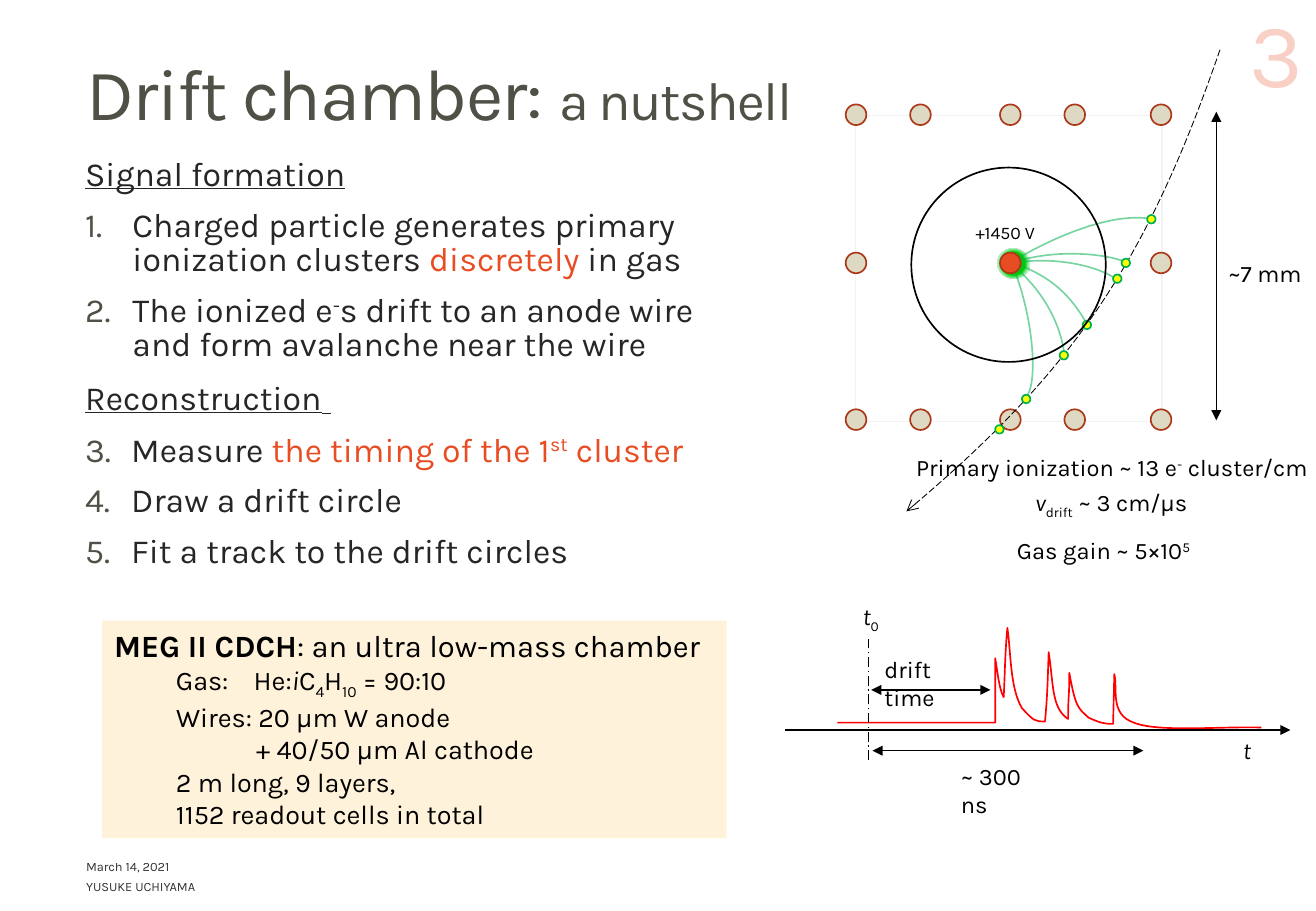
from dataclasses import dataclass
from itertools import product

from lxml.etree import SubElement
from pptx import Presentation
from pptx.dml.color import RGBColor
from pptx.dml.fill import FillFormat
from pptx.dml.line import LineFormat
from pptx.enum.dml import MSO_LINE
from pptx.enum.shapes import MSO_CONNECTOR, MSO_SHAPE
from pptx.enum.text import MSO_ANCHOR, MSO_AUTO_SIZE, PP_ALIGN
from pptx.oxml.ns import qn
from pptx.util import Pt

PX = 9144
FONT = "Karla"
BLACK, INK, OLIVE, ORANGE = "000000", "262626", "505046", "E84C22"
GREEN, YELLOW, RUST, SAND = "00B050", "FFFF00", "AC3819", "DDD9C3"
Point = tuple[int, int]
Segment = tuple[Point, ...]


@dataclass(frozen=True)
class Run:
    text: str
    size: float = 14
    color: str = BLACK
    alpha: int = 100
    bold: bool = False
    italic: bool = False
    underline: bool = False
    baseline: int = 0
    spacing: int = 0


@dataclass(frozen=True)
class Para:
    runs: tuple[Run, ...]
    margin: int = 0
    indent: int = 0
    number: int = 0
    line_spacing: float = 1.0
    before: float = 0
    align: PP_ALIGN = PP_ALIGN.LEFT


@dataclass(frozen=True)
class Label:
    box: tuple[int, int, int, int]
    para: Para
    wrap: bool = False
    anchor: MSO_ANCHOR = MSO_ANCHOR.TOP


@dataclass(frozen=True)
class Rule:
    start: Point
    end: Point
    head: str = ""
    tail: str = ""
    dash: MSO_LINE | None = None


def paint(fill: FillFormat, color: str, alpha: int = 100) -> None:
    fill.solid()
    fill.fore_color.rgb = RGBColor.from_string(color)
    if alpha < 100:
        SubElement(fill._xPr.find(qn("a:solidFill"))[0], qn("a:alpha"), val=str(alpha * 1000))


def stroke(line: LineFormat, color: str, width: float = 1, alpha: int = 100,
           dash: MSO_LINE | None = None, head: str = "", tail: str = "") -> None:
    paint(line.fill, color, alpha)
    line.width = Pt(width)
    if dash is not None:
        line.dash_style = dash
    for end, kind in (("a:headEnd", head), ("a:tailEnd", tail)):
        if kind:
            SubElement(line._get_or_add_ln(), qn(end), type=kind)


def place(shape, box: tuple[int, int, int, int]) -> None:
    shape.left, shape.top, shape.width, shape.height = (v * PX for v in box)


def write(frame, paras: list[Para]) -> None:
    for i, para in enumerate(paras):
        p = frame.add_paragraph() if i else frame.paragraphs[0]
        p.alignment, p.line_spacing = para.align, para.line_spacing
        p.space_before = Pt(para.before)
        pPr = p._p.get_or_add_pPr()
        pPr.set("marL", str(para.margin * PX))
        pPr.set("indent", str(para.indent * PX))
        if para.number:
            SubElement(SubElement(pPr, qn("a:buClr")), qn("a:srgbClr"), val=OLIVE)
            SubElement(pPr, qn("a:buFont"), typeface=FONT)
            SubElement(pPr, qn("a:buAutoNum"), type="arabicPeriod", startAt=str(para.number))
        else:
            SubElement(pPr, qn("a:buNone"))
        for item in para.runs:
            for n, text in enumerate(item.text.split("\n")):
                if n:
                    p.add_line_break()
                run = p.add_run()
                run.text = text
                font = run.font
                font.name, font.size = FONT, Pt(item.size)
                font.bold, font.italic, font.underline = item.bold, item.italic, item.underline
                paint(font.fill, item.color, item.alpha)
                rPr = run._r.get_or_add_rPr()
                if item.baseline:
                    rPr.set("baseline", str(item.baseline * 1000))
                if item.spacing:
                    rPr.set("spc", str(item.spacing))


def add_label(label: Label) -> None:
    box = slide.shapes.add_textbox(*(v * PX for v in label.box))
    frame = box.text_frame
    frame.word_wrap, frame.vertical_anchor = label.wrap, label.anchor
    write(frame, [label.para])


def add_preset(kind: MSO_SHAPE, box: tuple[int, int, int, int], fill: str = "", line: str = ""):
    shape = slide.shapes.add_shape(kind, *(v * PX for v in box))
    shape.shadow.inherit = False
    paint(shape.fill, fill) if fill else shape.fill.background()
    stroke(shape.line, line) if line else shape.line.fill.background()
    return shape


def add_curve(start: Point, segments: list[Segment], color: str, **style) -> None:
    builder = slide.shapes.build_freeform(*start, scale=PX)
    builder.add_line_segments([point for segment in segments for point in segment], close=False)
    curve = builder.convert_to_shape()
    curve.shadow.inherit = False
    curve.fill.background()
    stroke(curve.line, color, **style)
    steps = iter(curve._element.findall(".//" + qn("a:lnTo")))
    for segment in segments:
        first, *others = [next(steps) for _ in segment]
        if others:
            first.tag = qn("a:cubicBezTo")
            for step in others:
                first.append(step[0])
                step.getparent().remove(step)


def add_rule(rule: Rule) -> None:
    line = slide.shapes.add_connector(
        MSO_CONNECTOR.STRAIGHT, *(v * PX for v in rule.start + rule.end))
    stroke(line.line, BLACK, 0.75, dash=rule.dash, head=rule.head, tail=rule.tail)
    SubElement(line._element.spPr, qn("a:effectLst"))


def add_glow() -> None:
    glow = add_preset(MSO_SHAPE.OVAL, (822, 204, 24, 26), "00CA00")
    glow.rotation = 282.1
    solid = glow._element.spPr.find(qn("a:solidFill"))
    solid.tag = qn("a:gradFill")
    solid.remove(solid[0])
    stops = SubElement(solid, qn("a:gsLst"))
    for position, color in ((0, "00CA00"), (43, "00CA00"), (57, "9DF5B2"), (100, "FFFFFF")):
        stop = SubElement(stops, qn("a:gs"), pos=str(position * 1000))
        tint = SubElement(stop, qn("a:srgbClr"), val=color)
    SubElement(tint, qn("a:alpha"), val="33000")
    radial = SubElement(solid, qn("a:path"))
    radial.set("path", "circle")
    SubElement(radial, qn("a:fillToRect"), dict.fromkeys("ltrb", "50000"))


def body_para(*runs: Run, margin: int = 0, number: int = 0) -> Para:
    return Para(runs, margin, -margin, number, 0.85, 9.6)


def body_run(text: str, color: str = INK, **style) -> Run:
    return Run(text, 20, color, **style)


prs = Presentation()
prs.slide_width, prs.slide_height = 1083 * PX, 750 * PX
slide = prs.slides.add_slide(prs.slide_layouts[1])
add_glow()

title, steps_list = slide.placeholders
for holder, box, anchor in ((title, (61, 36, 957, 90), MSO_ANCHOR.MIDDLE),
                            (steps_list, (60, 126, 522, 360), MSO_ANCHOR.TOP)):
    place(holder, box)
    holder.text_frame.auto_size = MSO_AUTO_SIZE.NONE
    holder.text_frame.vertical_anchor = anchor
    slide.shapes._spTree.append(holder._element)
write(title.text_frame, [Para((Run("Drift chamber: ", 43, OLIVE, spacing=-90),
                               Run("a nutshell", 32, OLIVE, spacing=-90)), line_spacing=0.85)])
write(steps_list.text_frame, [
    body_para(body_run("Signal formation", underline=True)),
    body_para(body_run("Charged particle generates primary ionization clusters "),
              body_run("discretely ", ORANGE), body_run("in gas"), margin=39, number=1),
    body_para(body_run("The ionized e"), body_run("-", baseline=30),
              body_run("s drift to an anode wire and form avalanche near the wire"),
              margin=39, number=2),
    body_para(body_run("Reconstruction", underline=True), Run(" ", 22.3, INK, underline=True)),
    body_para(body_run("Measure "), body_run("the timing of the 1", ORANGE),
              body_run("st", ORANGE, baseline=30), body_run(" cluster", ORANGE),
              margin=38, number=3),
    body_para(body_run("Draw a drift circle"), margin=38, number=4),
    body_para(body_run("Fit a track to the drift circles"), margin=38, number=5),
])

CLUSTERS = [(944, 177), (923, 213), (916, 226), (891, 264), (872, 289), (841, 325), (819, 350)]
DRIFT_PATHS = [
    ((927, 216), ((911, 209), (868, 204), (831, 217))),
    ((919, 230), ((905, 220), (870, 210), (831, 217))),
    ((894, 266), ((882, 245), (866, 227), (832, 216))),
    ((876, 292), ((873, 268), (860, 240), (832, 217))),
    ((846, 325), ((855, 307), (848, 251), (832, 216))),
    ((946, 180), ((913, 175), (865, 196), (832, 216))),
]
for origin, drift in DRIFT_PATHS:
    add_curve(origin, [drift], GREEN, alpha=53)
add_preset(MSO_SHAPE.RECTANGLE, (704, 95, 252, 252), line="F2F2F2")
CATHODES = [*product((696, 749, 823, 876, 947), (86, 337)), *product((696, 947), (208,))]
for x, y in CATHODES:
    add_preset(MSO_SHAPE.OVAL, (x, y, 17, 17), SAND, RUST)
add_preset(MSO_SHAPE.OVAL, (823, 208, 17, 17), ORANGE, RUST)
add_curve((1004, 41), [((944, 215), (882, 307), (746, 421))], BLACK,
          width=0.5, dash=MSO_LINE.LONG_DASH, tail="arrow")
for x, y in CLUSTERS:
    add_preset(MSO_SHAPE.OVAL, (x, y, 7, 7), YELLOW, GREEN)
add_preset(MSO_SHAPE.OVAL, (750, 138, 160, 160), line=BLACK)

add_curve((689, 595), [
    ((819, 595),), ((819, 578), (819, 560), (819, 542)),
    ((821, 553), (822, 567), (826, 574)), ((827, 555), (827, 538), (829, 517)),
    ((832, 537), (831, 566), (841, 583)), ((851, 594), (852, 594), (860, 594)),
    ((862, 571), (862, 565), (863, 537)), ((867, 562), (865, 583), (879, 592)),
    ((879, 570), (880, 576), (880, 554)), ((885, 582), (887, 583), (896, 591)),
    ((905, 595), (908, 596), (916, 596)), ((917, 555),),
    ((920, 567), (913, 588), (933, 595)), ((953, 603), (1003, 598), (1038, 599)),
], "FF0000")
for rule in (
    Rule((646, 601), (1062, 601), tail="triangle"),
    Rule((717, 568), (815, 568), "triangle", "triangle"),
    Rule((715, 626), (715, 524), dash=MSO_LINE.LONG_DASH_DOT),
    Rule((718, 618), (941, 618), "triangle", "triangle"),
    Rule((1001, 92), (1001, 346), "triangle", "triangle"),
):
    add_rule(rule)

for label in (
    Label((61, 701, 366, 25), Para((Run("March 14, 2021", 7.6, alpha=80),)), True, MSO_ANCHOR.MIDDLE),
    Label((61, 717, 447, 25), Para((Run("YUSUKE UCHIYAMA", 7.6, alpha=80),)), True, MSO_ANCHOR.MIDDLE),
    Label((963, 2, 119, 90), Para((Run("3", 54, ORANGE, 25),), align=PP_ALIGN.RIGHT),
          True, MSO_ANCHOR.BOTTOM),
    Label((793, 178, 103, 38), Para((Run("+1450 V", 10.5),)), True),
    Label((842, 397, 147, 34), Para((Run("v", italic=True), Run("drift", baseline=-25),
                                     Run(" ~ 3 cm/μs")))),
    Label((827, 436, 177, 34), Para((Run("Gas gain ~ 5×10"), Run("5", baseline=30)))),
    Label((744, 368, 342, 34), Para((Run("Primary ionization ~ 13 e"), Run("-", baseline=30),
                                     Run(" cluster/cm")))),
    Label((1013, 601, 27, 34), Para((Run("t", italic=True),))),
    Label((700, 491, 34, 34), Para((Run("t", italic=True), Run("0", baseline=-25)))),
    Label((718, 534, 100, 34), Para((Run("drift time"),)), True),
    Label((781, 622, 90, 34), Para((Run("~ 300 ns"),)), True),
    Label((1001, 208, 83, 34), Para((Run("~7 mm"),))),
):
    add_label(label)

chamber = add_preset(MSO_SHAPE.RECTANGLE, (84, 511, 514, 179), "FFF2DA").text_frame
chamber.word_wrap, chamber.vertical_anchor = True, MSO_ANCHOR.TOP
write(chamber, [
    Para((Run("MEG II CDCH", 18.3, bold=True), Run(": an ultra low-mass chamber", 18.3))),
    Para((Run("Gas:\tHe:", 16), Run("i", 16, italic=True), Run("C", 16), Run("4", 16, baseline=-25),
          Run("H", 16), Run("10", 16, baseline=-25), Run(" = 90:10", 16)), 115, -64),
    Para((Run("Wires: 20 μm W anode\n+ 40/50 μm Al cathode", 16),), 117, -66),
    Para((Run("2 m long, 9 layers,\n1152 readout cells in total", 16),), 51),
])
prs.save("out.pptx")
